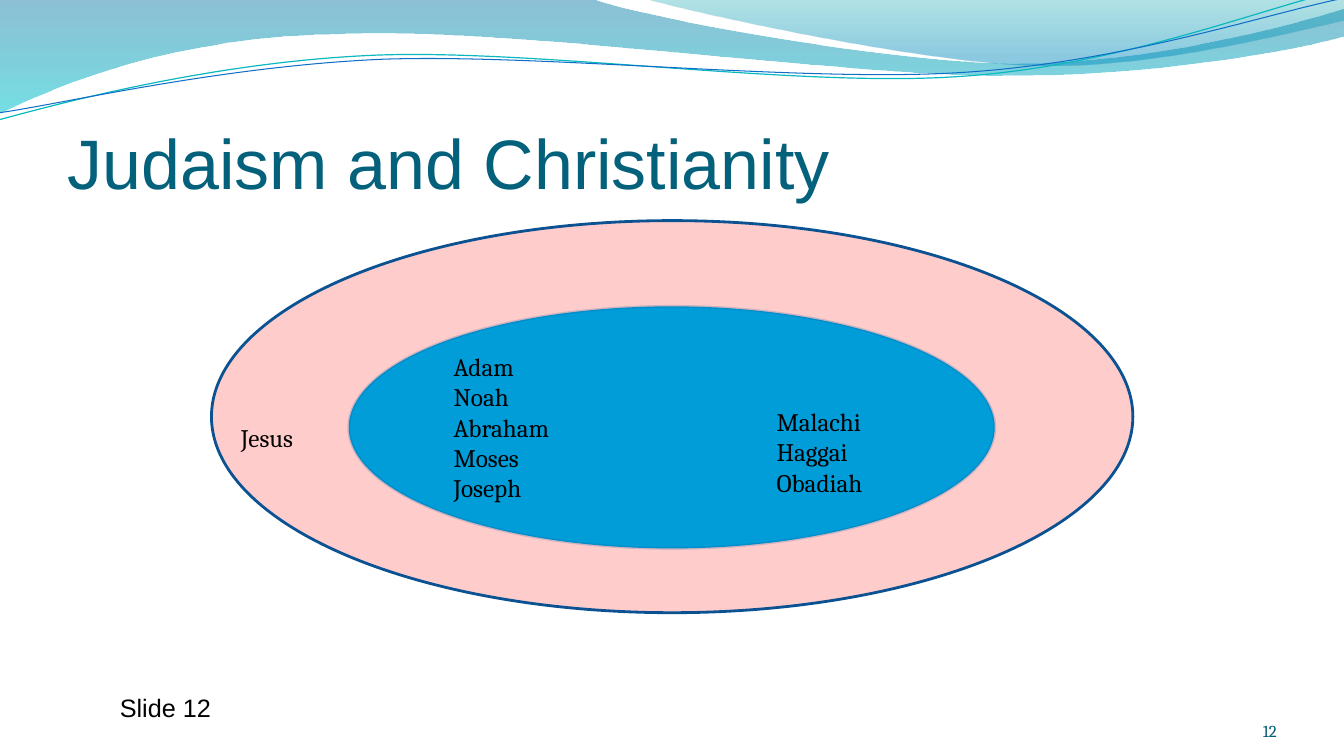
from lxml import etree
from pptx import Presentation
from pptx.dml.color import RGBColor
from pptx.enum.shapes import MSO_SHAPE
from pptx.enum.text import MSO_ANCHOR, MSO_AUTO_SIZE, PP_ALIGN
from pptx.oxml.ns import qn
from pptx.util import Cm, Pt

OVAL = MSO_SHAPE.OVAL
TOP, BOTTOM = MSO_ANCHOR.TOP, MSO_ANCHOR.BOTTOM
LEFT, RIGHT = PP_ALIGN.LEFT, PP_ALIGN.RIGHT
FIXED, GROW = MSO_AUTO_SIZE.NONE, MSO_AUTO_SIZE.SHAPE_TO_FIT_TEXT

COLORS = {
    "title": "04617B", "text": "000000", "number": "045C75",
    "outer": "FF0000", "inner": "009DD9", "outline": "0B5292",
    "teal": "0AB8BF", "blue": "0F6FC6",
    "band_top": "0074A1", "band_end": "00C6CF",
    "corner_top": "00A1A9", "corner_end": "008BBF",
}

BANDS = [
    ([[(0, 0)], [(14.91, -0.03)],
      [(16.1, 0.43), (22.48, 1.6), (25.68, 1.6)],
      [(28.91, 1.6), (32.46, 0.66), (33.86, 0.23)],
      [(33.91, 0.91)],
      [(33.3, 1.12), (29.46, 1.93), (25.25, 1.91)],
      [(21.06, 1.91), (12.93, 0.71), (8.71, 0.86)],
      [(4.37, 0.91), (1.55, 2.11), (-0.03, 2.87)],
      [(0, 0)]],
     [(0, "band_top", 45), (100, "band_end", 55)]),
    ([[(16.23, -0.03)],
      [(17.25, 0.28), (23.09, 1.57), (26.04, 1.65)],
      [(28.98, 1.75), (32.56, 0.81), (33.86, 0.53)],
      [(33.86, 0)], [(16.23, -0.03)]],
     [(0, "corner_top", 30), (80, "corner_end", 45)]),
]
WAVES = [
    ([[(-0.08, 2.22)],
      [(1.59, 1.85), (5.37, 1.03), (9.38, 1.04)],
      [(13.4, 1.05), (20.03, 2.36), (24.1, 2.27)],
      [(28.17, 2.21), (31.84, 0.91), (33.87, 0.55)]], "teal", 0.85),
    ([[(-0.05, 2.04)],
      [(1.56, 1.89), (5.54, 1.14), (9.61, 1.15)],
      [(13.65, 1.19), (20.19, 2.24), (24.23, 2.17)],
      [(28.31, 2.11), (31.91, 1.06), (33.94, 0.75)]], "blue", 0.75),
]
WAVE_ROTATION = 357.3
TITLE = "Judaism and Christianity"
ELLIPSES = [
    ((5.33, 5.56, 23.22, 9.88), "outer", 20, 100),
    ((8.79, 7.72, 16.28, 6.1), "inner", 100, 20),
]
LABELS = [
    (["Adam", "Noah", "Abraham", "Moses", "Joseph"], (11.18, 8.73, 3.96, 4.11), "Cambria"),
    (["Malachi", "Haggai", "Obadiah"], (19.32, 10.12, 4.57, 2.57), "Cambria"),
    (["Jesus"], (5.82, 10.52, 2.59, 1.02), "Cambria"),
    (["Slide 12"], (2.77, 17.32, 3, 1.02), "Arial"),
]
NUMBER = "12"


def rgb(name):
    return RGBColor.from_string(COLORS[name])


def add_alpha(color, percent):
    if percent < 100:
        etree.SubElement(color, qn("a:alpha"), val=str(percent * 1000))


def add_outline(segments, close):
    points = [(Cm(x), Cm(y)) for seg in segments for x, y in seg]
    builder = s.shapes.build_freeform(*points[0])
    builder.add_line_segments(points[1:], close=close)
    shape = builder.convert_to_shape()
    shape.shadow.inherit = False
    lines = iter(list(shape._element.iter(qn("a:lnTo"))))
    for seg in segments[1:]:
        first, *others = [next(lines) for _ in seg]
        if others:
            first.tag = qn("a:cubicBezTo")
        for line in others:
            first.append(line[0])
            line.getparent().remove(line)
    return shape


def fill_gradient(shape, stops):
    shape.fill.gradient()
    grad = shape._element.spPr.find(qn("a:gradFill"))
    gs_list = grad.find(qn("a:gsLst"))
    for gs in list(gs_list):
        gs_list.remove(gs)
    for pos, name, alpha in stops:
        gs = etree.SubElement(gs_list, qn("a:gs"), pos=str(pos * 1000))
        add_alpha(etree.SubElement(gs, qn("a:srgbClr"), val=COLORS[name]), alpha)
    grad.find(qn("a:lin")).set("ang", "5400000")


def write(tf, lines, font, size, color, align=LEFT, anchor=TOP, fit=FIXED):
    tf.text = "\n".join(lines)
    tf.word_wrap = True
    tf.auto_size = fit
    tf.vertical_anchor = anchor
    for p in tf.paragraphs:
        p.alignment = align
        p.font.name = font
        p.font.size = Pt(size)
        p.font.color.rgb = rgb(color)


def add_text(box, *style, **kwargs):
    tf = s.shapes.add_textbox(*map(Cm, box)).text_frame
    write(tf, *style, **kwargs)
    return tf


prs = Presentation()
prs.slide_width, prs.slide_height = Cm(33.87), Cm(19.05)
s = prs.slides.add_slide(prs.slide_layouts[5])

for segments, stops in BANDS:
    band = add_outline(segments, True)
    fill_gradient(band, stops)
    band.line.fill.background()

for segments, color, width in WAVES:
    wave = add_outline(segments, False)
    wave.rotation = WAVE_ROTATION
    wave.fill.background()
    wave.line.color.rgb = rgb(color)
    wave.line.width = Pt(width)

title = s.shapes.title
title.left, title.top, title.width, title.height = map(Cm, (1.7, 1.96, 30.48, 3.18))
tf = title.text_frame
write(tf, [TITLE], "Arial", 50, "title", anchor=BOTTOM)
tf.margin_left = tf.margin_right = tf.margin_bottom = 0

for box, color, fill_alpha, line_alpha in ELLIPSES:
    oval = s.shapes.add_shape(OVAL, *map(Cm, box))
    oval.shadow.inherit = False
    oval.fill.solid()
    oval.fill.fore_color.rgb = rgb(color)
    oval.line.color.rgb = rgb("outline")
    oval.line.width = Pt(2)
    fill_color, line_color = oval._element.spPr.iter(qn("a:srgbClr"))
    add_alpha(fill_color, fill_alpha)
    add_alpha(line_color, line_alpha)

for lines, box, font in LABELS:
    add_text(box, lines, font, 18, "text", fit=GROW)

tf = add_text((29.36, 17.65, 2.82, 1.02), [NUMBER], "Cambria", 12, "number",
              align=RIGHT, anchor=BOTTOM)
tf.margin_left = tf.margin_right = tf.margin_top = tf.margin_bottom = 0

prs.save("out.pptx")
